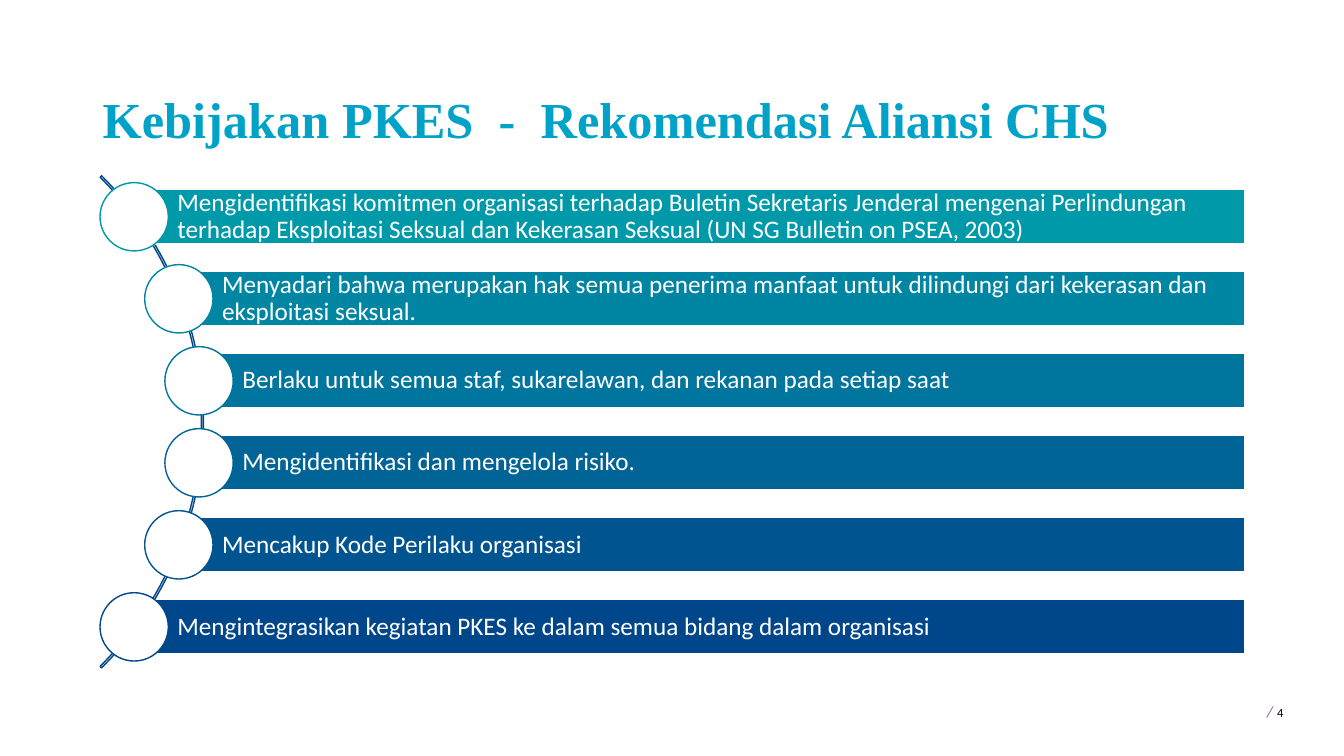
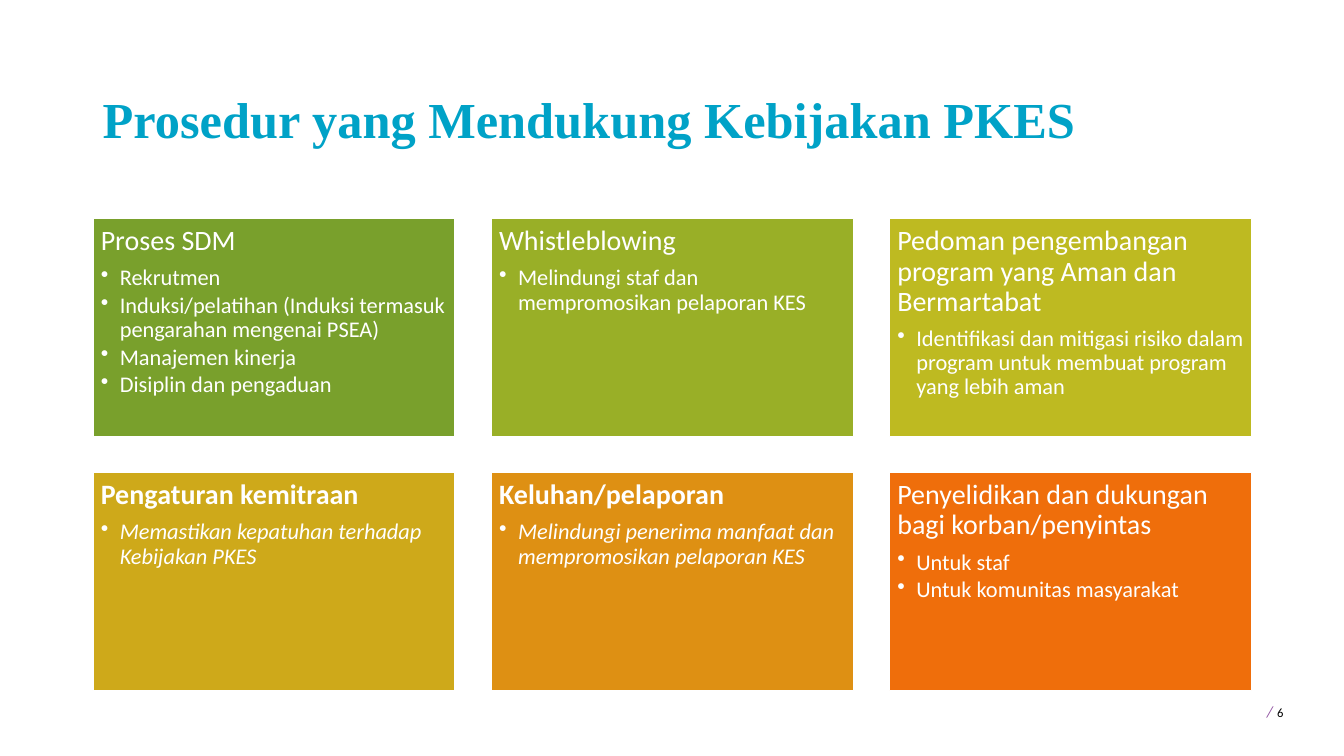
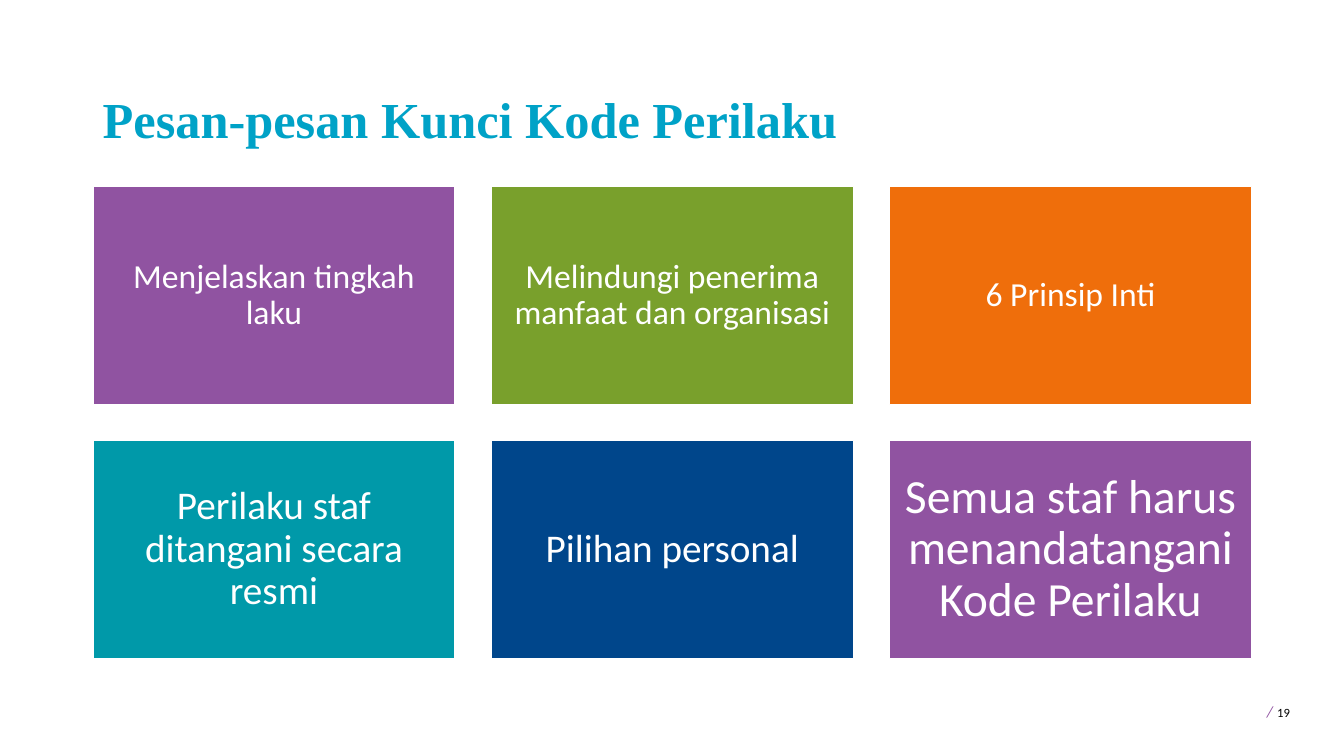
from collections import namedtuple
from math import sin, sqrt, radians

from lxml.etree import SubElement
from pptx import Presentation
from pptx.dml.color import RGBColor
from pptx.enum.shapes import MSO_SHAPE
from pptx.enum.text import MSO_ANCHOR, PP_ALIGN
from pptx.oxml.ns import qn
from pptx.util import Cm, Pt

COLOURS = {
    "title": "00A2C7", "white": "FFFFFF", "black": "000000",
    "purple": "9053A1", "green": "79A02C", "orange": "EF6E0B",
    "teal": "0099A9", "navy": "00468B",
    "teal_2": "0086A3", "teal_3": "00759D", "blue_4": "006497", "blue_5": "005591",
    "lime": "99AF27", "olive": "BEBA21", "gold": "CEA91A", "amber": "DE9013",
}
HEADING_FONT, BODY_FONT = "Times New Roman", "Calibri"

# Lengths in a Box are centimetres
Box = namedtuple("Box", "left top width height")
TITLE_BOX = Box(2.34, 1.02, 29.2, 2.87)
PAGE_BOX = Box(31.57, 17.48, 2.2, 1.02)
POLICY_BOX = Box(2.56, 4.43, 28.8, 12.4)
PROCEDURE_BOX = Box(2.34, 5.51, 29.2, 11.89)
MESSAGE_BOX = Box(2.34, 4.7, 29.2, 11.89)

POLICIES = [
    ("teal", "Mengidentifikasi komitmen organisasi terhadap Buletin Sekretaris Jenderal mengenai "
             "Perlindungan terhadap Eksploitasi Seksual dan Kekerasan Seksual "
             "(UN SG Bulletin on PSEA, 2003)"),
    ("teal_2", "Menyadari bahwa merupakan hak semua penerima manfaat untuk dilindungi dari "
               "kekerasan dan eksploitasi seksual."),
    ("teal_3", "Berlaku untuk semua staf, sukarelawan, dan rekanan pada setiap saat"),
    ("blue_4", "Mengidentifikasi dan mengelola risiko."),
    ("blue_5", "Mencakup Kode Perilaku organisasi"),
    ("navy", "Mengintegrasikan kegiatan PKES ke dalam semua bidang dalam organisasi"),
]
# Colour, heading, points, emphasised
PROCEDURES = [
    ("green", "Proses SDM",
     ["Rekrutmen", "Induksi/pelatihan (Induksi termasuk pengarahan mengenai PSEA)",
      "Manajemen kinerja", "Disiplin dan pengaduan"], False),
    ("lime", "Whistleblowing", ["Melindungi staf dan mempromosikan pelaporan KES"], False),
    ("olive", "Pedoman pengembangan program yang Aman dan Bermartabat",
     ["Identifikasi dan mitigasi risiko dalam program untuk membuat program yang lebih aman"],
     False),
    ("gold", "Pengaturan kemitraan", ["Memastikan kepatuhan terhadap Kebijakan PKES"], True),
    ("amber", "Keluhan/pelaporan",
     ["Melindungi penerima manfaat dan mempromosikan pelaporan KES"], True),
    ("orange", "Penyelidikan dan dukungan bagi korban/penyintas",
     ["Untuk staf", "Untuk komunitas masyarakat"], False),
]
# Colour, message, text size, inset
MESSAGES = [
    ("purple", "Menjelaskan tingkah laku", 24, 0.25),
    ("green", "Melindungi penerima manfaat dan organisasi", 24, 0.25),
    ("orange", "6 Prinsip Inti", 24, 0.25),
    ("teal", "Perilaku staf ditangani secara resmi", 28, 0.3),
    ("navy", "Pilihan personal", 28, 0.3),
    ("purple", "Semua staf harus menandatangani Kode Perilaku", 34, 0.36),
]


def rgb(colour):
    return RGBColor.from_string(COLOURS[colour])


def set_format(target, values):
    for name, value in values.items():
        setattr(target, name, value)


def set_frame(shape, anchor, inset=None, left=None):
    frame = shape.text_frame
    set_format(frame, {"word_wrap": True, "vertical_anchor": anchor})
    if inset is not None:
        set_format(frame, {f"margin_{side}": Cm(inset) for side in ("top", "right", "bottom")})
        frame.margin_left = Cm(inset if left is None else left)
    return frame


def add_run(paragraph, text, size, colour="white", font=BODY_FONT, **style):
    run = paragraph.add_run()
    run.text = text
    set_format(run.font, {"name": font, "size": Pt(size), **style})
    run.font.color.rgb = rgb(colour)


def add_figure(slide, preset, box, fill, line):
    figure = slide.shapes.add_shape(preset, *map(Cm, box))
    figure.shadow.inherit = False
    if fill:
        figure.fill.solid()
        figure.fill.fore_color.rgb = rgb(fill)
    else:
        figure.fill.background()
    figure.line.color.rgb = rgb(line)
    figure.line.width = Pt(1)
    return figure


def add_bullet(paragraph):
    properties = paragraph._p.get_or_add_pPr()
    properties.set("marL", str(Cm(0.48)))
    properties.set("indent", str(-Cm(0.48)))
    SubElement(properties, qn("a:buChar")).set("char", "•")


def new_slide(deck, title, page):
    """Blank slide with the shared title and page number."""
    slide = deck.slides.add_slide(deck.slide_layouts[6])
    heading = slide.shapes.add_textbox(*map(Cm, TITLE_BOX))
    paragraph = set_frame(heading, MSO_ANCHOR.BOTTOM).paragraphs[0]
    paragraph.line_spacing = 0.9
    add_run(paragraph, title, 36, "title", HEADING_FONT, bold=True)

    number = slide.shapes.add_textbox(*map(Cm, PAGE_BOX))
    paragraph = set_frame(number, MSO_ANCHOR.TOP).paragraphs[0]
    add_run(paragraph, " ", 13.5, "black")
    add_run(paragraph, "/", 11.2, "purple", italic=True)
    add_run(paragraph, " ", 13.5, "black")
    add_run(paragraph, page, 9, "black")
    return slide


def add_policy_bars(slide, box, policies):
    """Bars whose round markers follow a quarter-circle arc."""
    # Arc from -45 to 45 degrees, as tall as the box
    half = box.height / 2
    radius = half / sin(radians(45))
    centre_x, centre_y = box.left - half, box.top + half
    arc_box = Box(centre_x - radius, centre_y - radius, 2 * radius, 2 * radius)
    arc = add_figure(slide, MSO_SHAPE.BLOCK_ARC, arc_box, None, "navy")
    for index, value in enumerate((189, 27, 0.003)):
        arc.adjustments[index] = value

    pitch = box.height / len(policies)
    bar_height = pitch * 2 / 3
    marker = bar_height * 1.25
    for index, (colour, policy) in enumerate(policies):
        y = box.top + pitch * (index + 0.5)
        x = centre_x + sqrt((radius - 0.05) ** 2 - (y - centre_y) ** 2)
        bar_box = Box(x, y - bar_height / 2, box.left + box.width - x, bar_height)
        bar = add_figure(slide, MSO_SHAPE.RECTANGLE, bar_box, colour, "white")
        paragraph = set_frame(bar, MSO_ANCHOR.MIDDLE, 0.12, 1.09).paragraphs[0]
        set_format(paragraph, {"alignment": PP_ALIGN.LEFT, "line_spacing": 0.9})
        add_run(paragraph, policy, 18)
        marker_box = Box(x - marker / 2, y - marker / 2, marker, marker)
        add_figure(slide, MSO_SHAPE.OVAL, marker_box, "white", colour)


def add_tiles(slide, box, colours, columns=3, rows=2, gap=0.91):
    """Equal tiles, row by row."""
    width = (box.width - gap * (columns - 1)) / columns
    height = (box.height - gap * (rows - 1)) / rows
    tiles = []
    for index, colour in enumerate(colours):
        row, column = divmod(index, columns)
        tile_box = Box(box.left + column * (width + gap), box.top + row * (height + gap),
                       width, height)
        tiles.append(add_figure(slide, MSO_SHAPE.RECTANGLE, tile_box, colour, "white"))
    return tiles


def add_procedures(slide, box, procedures):
    """Tiles with a heading and bullet points."""
    tiles = add_tiles(slide, box, [procedure[0] for procedure in procedures])
    for tile, (_, heading, points, emphasised) in zip(tiles, procedures):
        frame = set_frame(tile, MSO_ANCHOR.TOP, 0.2)
        paragraph = frame.paragraphs[0]
        set_format(paragraph, {"alignment": PP_ALIGN.LEFT, "line_spacing": 0.9,
                               "space_after": Pt(7)})
        add_run(paragraph, heading, 20, bold=emphasised)
        for point in points:
            paragraph = frame.add_paragraph()
            add_bullet(paragraph)
            set_format(paragraph, {"level": 1, "alignment": PP_ALIGN.LEFT,
                                   "line_spacing": 0.9, "space_after": Pt(2.4)})
            add_run(paragraph, point, 16, italic=emphasised)


def add_messages(slide, box, messages):
    """Tiles with one centred message each."""
    tiles = add_tiles(slide, box, [message[0] for message in messages])
    for tile, (_, message, size, inset) in zip(tiles, messages):
        paragraph = set_frame(tile, MSO_ANCHOR.MIDDLE, inset).paragraphs[0]
        set_format(paragraph, {"alignment": PP_ALIGN.CENTER, "line_spacing": 0.9})
        add_run(paragraph, message, size)


def main():
    deck = Presentation()
    set_format(deck, {"slide_width": Cm(33.87), "slide_height": Cm(19.05)})
    add_policy_bars(new_slide(deck, "Kebijakan PKES  -  Rekomendasi Aliansi CHS", "4"),
                    POLICY_BOX, POLICIES)
    add_procedures(new_slide(deck, "Prosedur yang Mendukung Kebijakan PKES", "6"),
                   PROCEDURE_BOX, PROCEDURES)
    add_messages(new_slide(deck, "Pesan-pesan Kunci Kode Perilaku", "19"),
                 MESSAGE_BOX, MESSAGES)
    deck.save("out.pptx")


if __name__ == "__main__":
    main()
